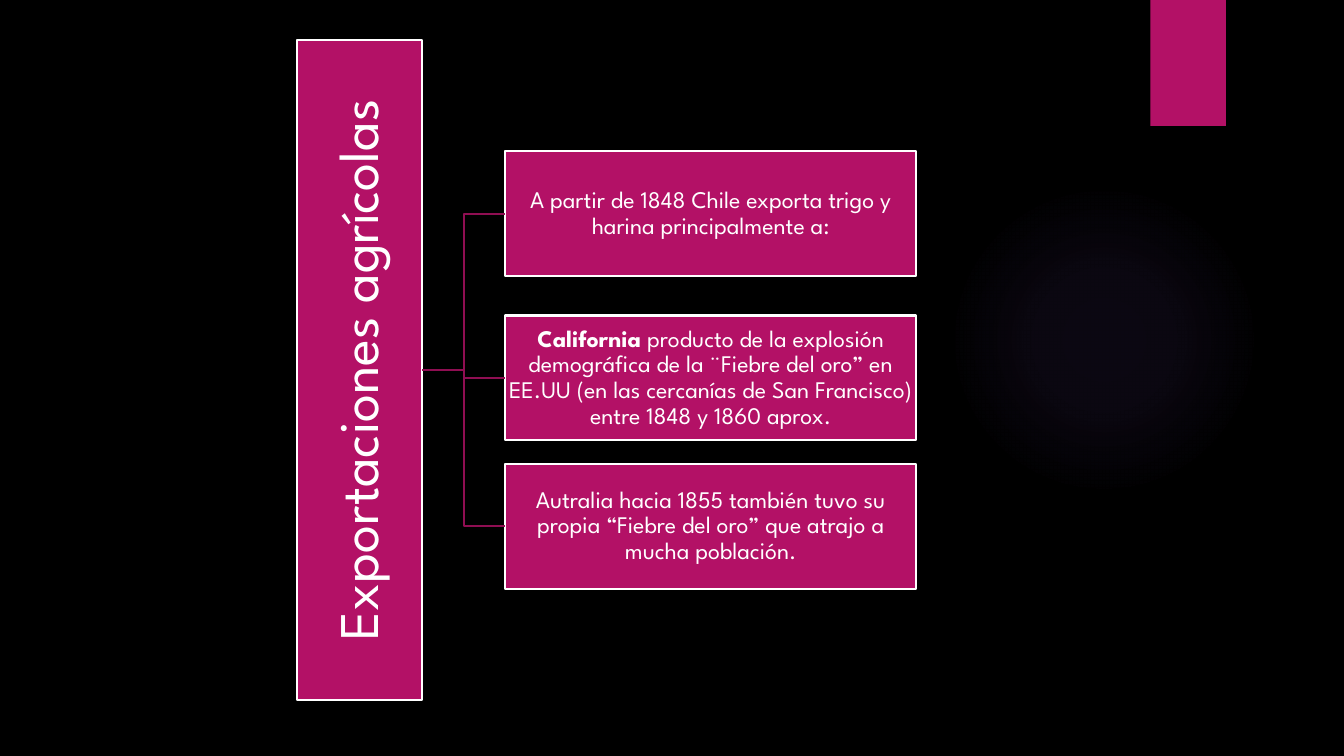
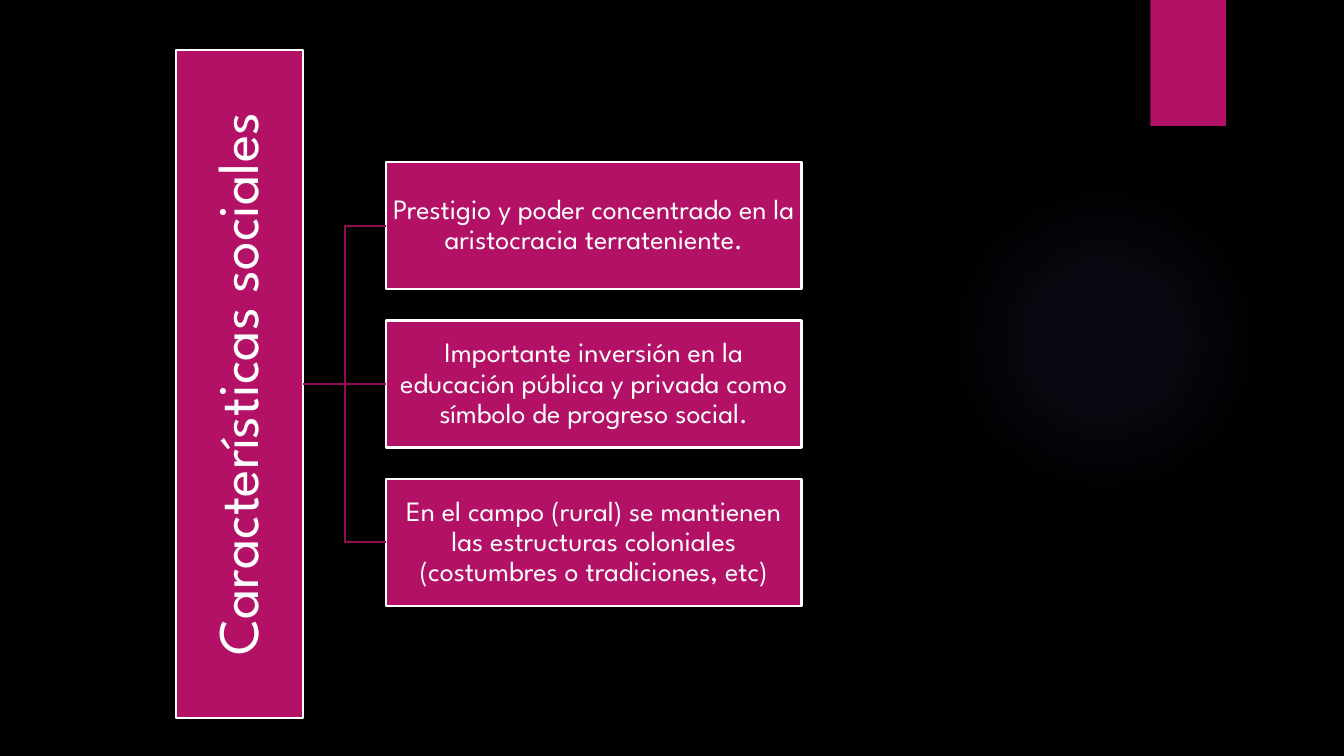
import dataclasses

import pptx
import pptx.dml.color
import pptx.enum.shapes
import pptx.enum.text
import pptx.oxml
import pptx.oxml.ns
import pptx.util

Inches = pptx.util.Inches
Pt = pptx.util.Pt
RGB = pptx.dml.color.RGBColor
MSO_SHAPE = pptx.enum.shapes.MSO_SHAPE
MSO_CONNECTOR = pptx.enum.shapes.MSO_CONNECTOR


@dataclasses.dataclass(frozen=True)
class Theme:
    background: RGB = RGB(0x00, 0x00, 0x00)
    accent: RGB = RGB(0xB3, 0x11, 0x66)
    branch: RGB = RGB(0x8F, 0x0E, 0x52)
    light: RGB = RGB(0xFF, 0xFF, 0xFF)
    glow: RGB = RGB(0x9B, 0x6B, 0xF2)
    glow_stops: tuple = ((0, 7), (36, 6), (69, 0))  # position %, opacity %
    font: str = "League Spartan"
    line_width: float = 1.5
    line_spacing: float = 0.9
    root_margin: float = 0.03
    topic_margin: float = 0.01


THEME = Theme()


@dataclasses.dataclass(frozen=True)
class Tree:
    """One slide: a vertical root bar branching to topics, in inches and points."""
    root: str
    topics: tuple
    left: float
    top: float
    bar_length: float
    thickness: float
    topic_left: float
    topic_width: float
    topic_tops: tuple
    root_size: int
    topic_size: int


TREES = (
    Tree(
        root="Exportaciones agrícolas",
        topics=(
            ("", "A partir de 1848 Chile exporta trigo y harina principalmente a:"),
            ("California", " producto de la explosión demográfica de la ¨Fiebre del oro” en "
             "EE.UU (en las cercanías de San Francisco) entre 1848 y 1860 aprox."),
            ("", "Autralia hacia 1855 también tuvo su propia “Fiebre del oro” que atrajo "
             "a mucha población."),
        ),
        left=2.95, top=0.4, bar_length=6.54, thickness=1.24,
        topic_left=5.01, topic_width=4.08, topic_tops=(1.5, 3.13, 4.6),
        root_size=40, topic_size=17,
    ),
    Tree(
        root="Características sociales",
        topics=(
            ("", "Prestigio y poder concentrado en la aristocracia terrateniente."),
            ("", "Importante inversión en la educación pública y privada como símbolo "
             "de progreso social."),
            ("", "En el campo (rural) se mantienen las estructuras coloniales "
             "(costumbres o tradiciones, etc)"),
        ),
        left=1.75, top=0.5, bar_length=6.62, thickness=1.26,
        topic_left=3.83, topic_width=4.12, topic_tops=(1.61, 3.18, 4.75),
        root_size=41, topic_size=20,
    ),
)


def add_master_shape(master, slide, kind, left, top, width, height):
    """Draw a borderless shape and move it to the master."""
    shape = slide.shapes.add_shape(
        kind, Inches(left), Inches(top), Inches(width), Inches(height))
    shape.shadow.inherit = False
    shape.line.fill.background()
    tree = master.shapes.element
    shape.element.nvSpPr.cNvPr.set("id", str(len(tree) + 100))
    tree.append(shape.element)
    return shape


def fill_glow(shape):
    stops = "".join(
        f'<a:gs pos="{position * 1000}"><a:srgbClr val="{THEME.glow}">'
        f'<a:alpha val="{opacity * 1000}"/></a:srgbClr></a:gs>'
        for position, opacity in THEME.glow_stops)
    gradient = pptx.oxml.parse_xml(
        f'<a:gradFill {pptx.oxml.ns.nsdecls("a")}><a:gsLst>{stops}</a:gsLst>'
        '<a:path path="circle">'
        '<a:fillToRect l="50000" t="50000" r="50000" b="50000"/></a:path></a:gradFill>')
    shape.element.spPr.insert(2, gradient)


def decorate_master(master, slide):
    master.background.fill.solid()
    master.background.fill.fore_color.rgb = THEME.background
    fill_glow(add_master_shape(master, slide, MSO_SHAPE.OVAL, 9.41, 1.83, 3.08, 3.08))
    tab = add_master_shape(master, slide, MSO_SHAPE.RECTANGLE, 11.41, 0, 0.75, 1.25)
    tab.fill.solid()
    tab.fill.fore_color.rgb = THEME.accent


def style_box(box, margin, size):
    """Format a filled, outlined box and its centred text."""
    box.fill.solid()
    box.fill.fore_color.rgb = THEME.accent
    box.line.color.rgb = THEME.light
    box.line.width = Pt(THEME.line_width)

    frame = box.text_frame
    frame.word_wrap = True
    frame.auto_size = pptx.enum.text.MSO_AUTO_SIZE.NONE
    frame.vertical_anchor = pptx.enum.text.MSO_ANCHOR.MIDDLE
    frame.margin_left = frame.margin_right = Inches(margin)
    frame.margin_top = frame.margin_bottom = Inches(margin)
    paragraph = frame.paragraphs[0]
    paragraph.alignment = pptx.enum.text.PP_ALIGN.CENTER
    paragraph.line_spacing = THEME.line_spacing
    for run in paragraph.runs:
        run.font.name = THEME.font
        run.font.size = Pt(size)
        run.font.color.rgb = THEME.light


def place_root(slide, tree):
    """Turn the title into an upright bar that reads upwards."""
    root = slide.shapes.title
    overhang = (tree.bar_length - tree.thickness) / 2
    root.left, root.top = Inches(tree.left - overhang), Inches(tree.top + overhang)
    root.width, root.height = Inches(tree.bar_length), Inches(tree.thickness)
    root.rotation = 270
    root.text_frame.text = tree.root
    style_box(root, THEME.root_margin, tree.root_size)


def add_topic(slide, tree, top, lead, text):
    topic = slide.shapes.add_shape(
        MSO_SHAPE.RECTANGLE, Inches(tree.topic_left), Inches(top),
        Inches(tree.topic_width), Inches(tree.thickness))
    topic.shadow.inherit = False
    paragraph = topic.text_frame.paragraphs[0]
    if lead:
        lead_run = paragraph.add_run()
        lead_run.text = lead
        lead_run.font.bold = True
    paragraph.add_run().text = text
    style_box(topic, THEME.topic_margin, tree.topic_size)
    return topic


def add_branch(slide, tree, topic):
    """Join the middle of the root's right side to a topic."""
    start_x = Inches(tree.left + tree.thickness)
    start_y = Inches(tree.top + tree.bar_length / 2)
    end_y = topic.top + topic.height // 2
    level = abs(end_y - start_y) < Inches(0.02)
    kind = MSO_CONNECTOR.STRAIGHT if level else MSO_CONNECTOR.ELBOW
    branch = slide.shapes.add_connector(kind, start_x, start_y, topic.left, end_y)
    branch.end_connect(topic, 1)
    branch.line.color.rgb = THEME.branch
    branch.line.width = Pt(THEME.line_width)
    branch.element.spPr.append(
        pptx.oxml.parse_xml(f'<a:effectLst {pptx.oxml.ns.nsdecls("a")}/>'))


def fill_slide(slide, tree):
    place_root(slide, tree)
    for top, (lead, text) in zip(tree.topic_tops, tree.topics):
        add_branch(slide, tree, add_topic(slide, tree, top, lead, text))


def main():
    deck = pptx.Presentation()
    deck.slide_width, deck.slide_height = Inches(13.33), Inches(7.5)
    title_only = deck.slide_layouts.get_by_name("Title Only")
    slides = [deck.slides.add_slide(title_only) for _ in TREES]
    decorate_master(deck.slide_master, slides[0])
    for slide, tree in zip(slides, TREES):
        fill_slide(slide, tree)
    deck.save("out.pptx")


if __name__ == "__main__":
    main()
